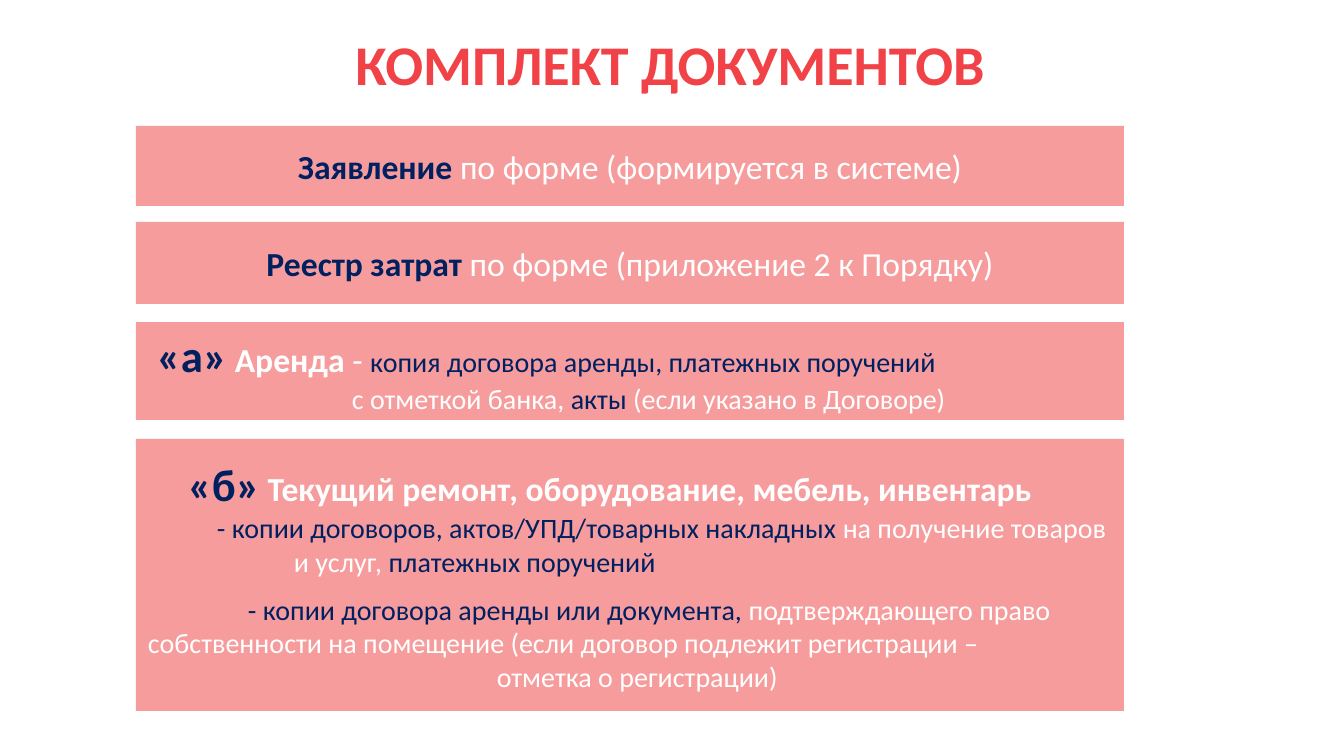
from pptx import Presentation
from pptx.dml.color import RGBColor
from pptx.enum.shapes import MSO_SHAPE
from pptx.enum.text import MSO_ANCHOR, PP_ALIGN
from pptx.util import Pt

PLATE = MSO_SHAPE.PENTAGON
MIDDLE = MSO_ANCHOR.MIDDLE
CENTER, LEFT = PP_ALIGN.CENTER, PP_ALIGN.LEFT

THEME = {
    "font": "Calibri",
    "red": RGBColor(0xF0, 0x42, 0x47),
    "pink": RGBColor(0xF6, 0x9C, 0x9C),
    "navy": RGBColor(0x00, 0x20, 0x60),
    "white": RGBColor(0xFF, 0xFF, 0xFF),
    "title": Pt(40),
    "mark": Pt(32),
    "head": Pt(24),
    "body": Pt(20),
}


def px(n):
    return round(n * 914400 / 100.8)


def style(font, color=None, size=None, bold=None):
    if color:
        font.color.rgb = THEME[color]
    if size:
        font.size = THEME[size]
    if bold is not None:
        font.bold = bold


deck = Presentation()
deck.slide_width, deck.slide_height = px(1344), px(756)
slide = deck.slides.add_slide(deck.slide_layouts[6])

# Title
box = slide.shapes.add_textbox(px(-2), px(-6), px(1344), px(144))
frame = box.text_frame
frame.word_wrap = True
frame.vertical_anchor = MIDDLE
para = frame.paragraphs[0]
para.text = "КОМПЛЕКТ ДОКУМЕНТОВ"
para.alignment = CENTER
para.line_spacing = 0.96
para.font.name = THEME["font"]
style(para.font, "red", "title", True)

# Bars: top, height, lines
# Line: indent (None = centred), space after in points, size, runs
# Run: text, colour, bold, own size
BARS = [
    (126, 80, [
        (None, 0, "head", [("Заявление", "navy", True, None),
                           (" по форме (формируется в системе)", "white", False, None)]),
    ]),
    (222, 82, [
        (None, 0, "head", [("Реестр затрат ", "navy", True, None),
                           ("по форме (приложение 2 к Порядку)", "white", False, None)]),
    ]),
    (322, 98, [
        (11, 0, "body", [("«а»", "navy", True, "mark"),
                         (" Аренда", "white", True, "head"),
                         (" - ", "white", False, "head"),
                         ("копия договора аренды, платежных поручений", "navy", False, None)]),
        (206, 0, "body", [("с отметкой банка, ", "white", False, None),
                          ("акты", "navy", False, None),
                          (" (если указано в Договоре)", "white", False, None)]),
    ]),
    (439, 272, [
        (42, 0, "head", [("«б»", "navy", True, "mark"),
                         (" Текущий ремонт, оборудование, мебель, инвентарь", "white", True, None)]),
        (71, 0, "body", [("- копии договоров, актов/УПД/товарных накладных ", "navy", False, None),
                         ("на получение товаров", "white", False, None)]),
        (148, 10, "body", [("и услуг,", "white", False, None),
                           (" платежных поручений", "navy", False, None)]),
        (102, 0, "body", [("- копии договора аренды или документа, ", "navy", False, None),
                          ("подтверждающего право", "white", False, None)]),
        (2, 0, "body", [("собственности на помещение (если договор подлежит регистрации –",
                         "white", False, None)]),
        (351, 0, "body", [("отметка о регистрации)", "white", False, None)]),
    ]),
]

for top, height, lines in BARS:
    bar = slide.shapes.add_shape(PLATE, px(136), px(top), px(988), px(height))
    bar.adjustments[0] = 0
    bar.shadow.inherit = False
    bar.fill.solid()
    bar.fill.fore_color.rgb = THEME["pink"]
    bar.line.fill.background()
    frame = bar.text_frame
    frame.word_wrap = True
    frame.vertical_anchor = MIDDLE
    for i, (indent, after, size, runs) in enumerate(lines):
        para = frame.add_paragraph() if i else frame.paragraphs[0]
        para.alignment = CENTER if indent is None else LEFT
        if indent:
            para._p.get_or_add_pPr().set("marL", str(px(indent)))
        para.space_after = Pt(after)
        para.font.name = THEME["font"]
        style(para.font, size=size)
        for text, color, bold, own in runs:
            run = para.add_run()
            run.text = text
            style(run.font, color, own, bold)

deck.save("out.pptx")
